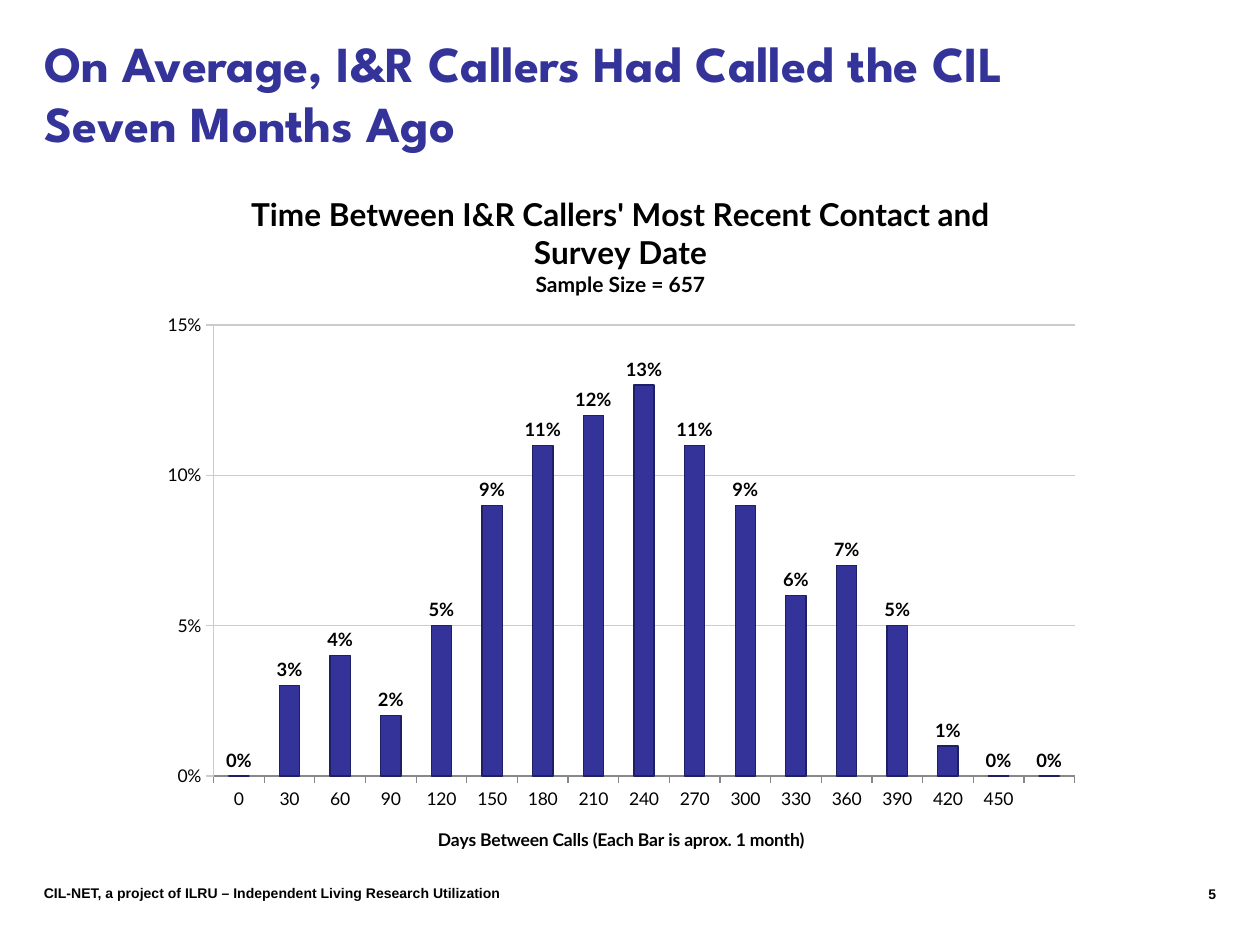
from pptx import Presentation
from pptx.chart.data import CategoryChartData as ChartData
from pptx.dml.color import RGBColor
from pptx.enum.chart import XL_CHART_TYPE as ChartType
from pptx.enum.chart import XL_LABEL_POSITION as LabelPosition
from pptx.enum.chart import XL_TICK_MARK as TickMark
from pptx.enum.text import MSO_ANCHOR as Anchor
from pptx.enum.text import MSO_AUTO_SIZE as AutoSize
from pptx.enum.text import PP_ALIGN as Align
from pptx.oxml import parse_xml
from pptx.oxml.ns import nsdecls, qn
from pptx.util import Pt

INDIGO = RGBColor(0x33, 0x33, 0x99)
NAVY = RGBColor(0x1F, 0x1F, 0x66)
BLACK = RGBColor(0, 0, 0)
GRAY = RGBColor(0x88, 0x88, 0x88)
SILVER = RGBColor(0xCC, 0xCC, 0xCC)

PERCENTS = [0, 3, 4, 2, 5, 9, 11, 12, 13, 11, 9, 6, 7, 5, 1, 0, 0]
DAYS = [str(30 * month) for month in range(len(PERCENTS) - 1)] + [""]
PLOT_LAYOUT = {"x": 0.07, "y": 0.22, "w": 0.91, "h": 0.63}


class SlideWriter:
    """Holds the style and the current slide, and adds elements to it."""

    title_font = "League Spartan"
    chart_font = "Lato"
    footer_font = "Arial"

    def __init__(self, deck):
        self.slide = deck.slides.add_slide(deck.slide_layouts[5])

    def style(self, font, name, size, color=BLACK, bold=True):
        font.name = name
        font.size = Pt(size)
        font.bold = bold
        font.color.rgb = color

    def place(self, box, left, top, width, height):
        box.left, box.top = Pt(left), Pt(top)
        box.width, box.height = Pt(width), Pt(height)

    def title(self, text, *area):
        box = self.slide.shapes.title
        self.place(box, *area)
        frame = box.text_frame
        frame.word_wrap = True
        frame.auto_size = AutoSize.NONE
        frame.vertical_anchor = Anchor.MIDDLE
        para = frame.paragraphs[0]
        para.alignment = Align.LEFT
        self.span(para, text, self.title_font, 28.8, INDIGO)

    def span(self, para, text, name, size, color=BLACK):
        span = para.add_run()
        span.text = text
        self.style(span.font, name, size, color)

    def footer(self, text, align, *area):
        box = self.slide.shapes.add_textbox(*map(Pt, area))
        box.text_frame.word_wrap = True
        para = box.text_frame.paragraphs[0]
        para.alignment = align
        self.span(para, text, self.footer_font, 8)

    def line(self, line_format, color):
        line_format.color.rgb = color
        line_format.width = Pt(0.75)

    def chart(self, data, heading, axis_title, *area):
        frame = self.slide.shapes.add_chart(
            ChartType.COLUMN_CLUSTERED, *map(Pt, area), data)
        chart = frame.chart
        chart.has_legend = False
        self.style(chart.font, self.chart_font, 10, bold=False)
        chart.has_title = True
        chart.chart_title.include_in_layout = False
        self.chart_text(chart.chart_title.text_frame, heading)
        self.category_axis(chart.category_axis, axis_title)
        self.value_axis(chart.value_axis)
        self.columns(chart.plots[0])
        self.plot_layout(chart)

    def chart_text(self, frame, lines):
        for index, (text, size) in enumerate(lines):
            para = frame.add_paragraph() if index else frame.paragraphs[0]
            self.span(para, text, self.chart_font, size)

    def category_axis(self, axis, text):
        axis.has_title = True
        self.chart_text(axis.axis_title.text_frame, [(text, 10)])
        axis.major_tick_mark = TickMark.OUTSIDE
        axis.has_major_gridlines = False
        self.line(axis.format.line, GRAY)

    def value_axis(self, axis):
        axis.minimum_scale = 0
        axis.maximum_scale = 0.15
        axis.major_unit = 0.05
        axis.major_tick_mark = TickMark.OUTSIDE
        axis.tick_labels.number_format = "0%"
        axis.tick_labels.number_format_is_linked = False
        axis.has_major_gridlines = True
        for line_format in (axis.format.line, axis.major_gridlines.format.line):
            self.line(line_format, SILVER)

    def columns(self, plot):
        plot.gap_width = 150
        plot.vary_by_categories = False
        series = plot.series[0]
        series.format.fill.solid()
        series.format.fill.fore_color.rgb = INDIGO
        self.line(series.format.line, NAVY)
        labels = series.data_labels
        labels.show_value = True
        labels.position = LabelPosition.OUTSIDE_END
        labels.number_format = "0%"
        labels.number_format_is_linked = False
        self.style(labels.font, self.chart_font, 10.5)

    def plot_layout(self, chart):
        area = chart.plots[0]._element.getparent()
        for layout in area.findall(qn("c:layout")):
            area.remove(layout)
        modes = "".join(f'<c:{side}Mode val="edge"/>' for side in "xy")
        sizes = "".join(f'<c:{key} val="{value}"/>'
                        for key, value in PLOT_LAYOUT.items())
        area.insert(0, parse_xml(
            f'<c:layout {nsdecls("c")}><c:manualLayout>'
            f'<c:layoutTarget val="inner"/>{modes}{sizes}'
            f'</c:manualLayout></c:layout>'))


def main():
    deck = Presentation()
    deck.slide_width, deck.slide_height = Pt(720), Pt(540)
    writer = SlideWriter(deck)
    writer.footer("5", Align.RIGHT, 653.8, 502.6, 48.2, 19.4)
    writer.footer(
        "CIL-NET, a project of ILRU – Independent Living Research Utilization",
        Align.LEFT, 18, 501.8, 360, 16.6)
    data = ChartData(number_format="0%")
    data.categories = DAYS
    data.add_series("Series 1", [percent / 100 for percent in PERCENTS])
    heading = [
        ("Time Between I&R Callers' Most Recent Contact and Survey Date", 18),
        ("Sample Size = 657", 12),
    ]
    writer.chart(data, heading, "Days Between Calls (Each Bar is aprox. 1 month)",
                 84.2, 95.8, 540.7, 409)
    writer.title("On Average, I&R Callers Had Called the CIL Seven Months Ago",
                 18, 21.6, 606.2, 62.6)
    deck.save("out.pptx")


if __name__ == "__main__":
    main()
